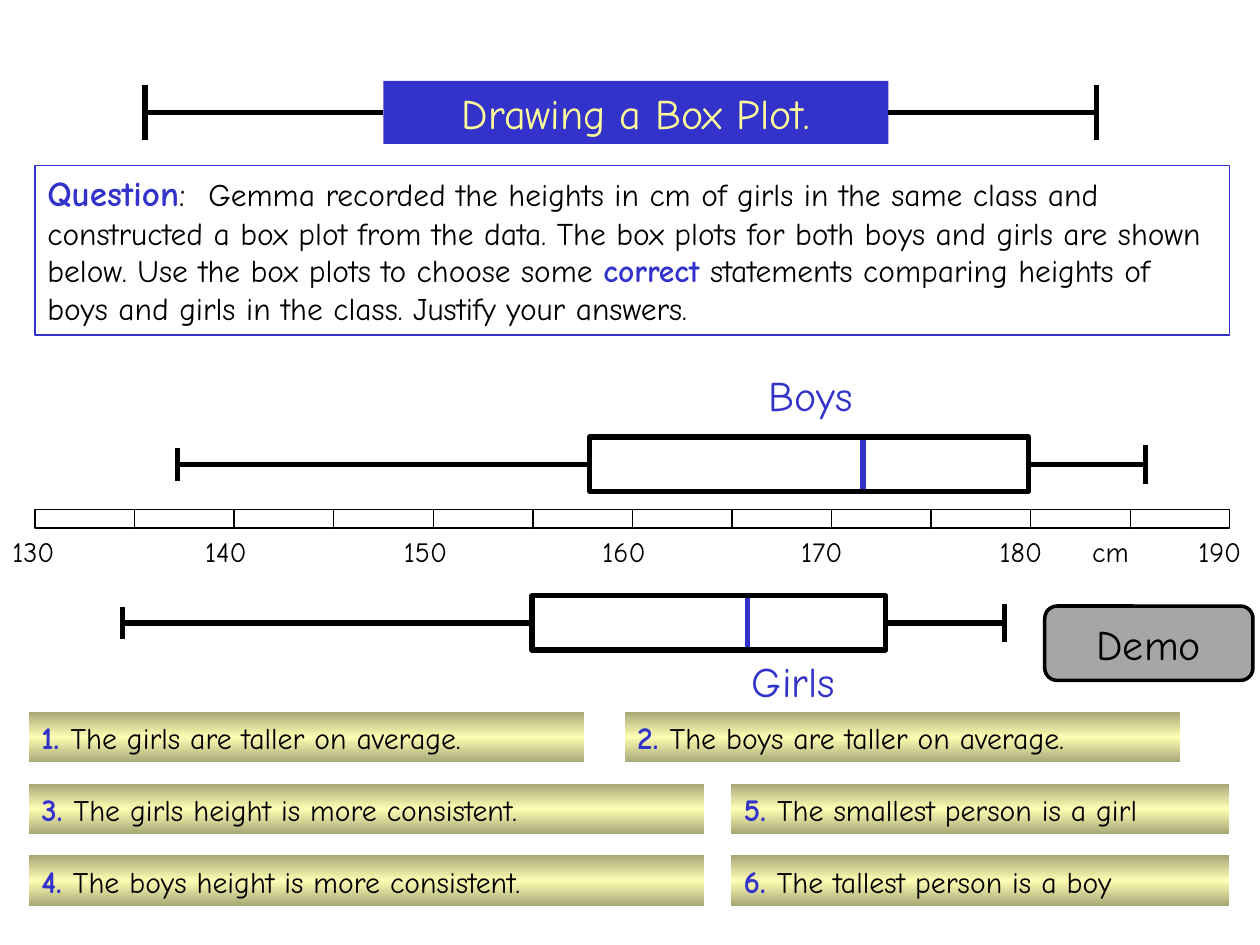
from copy import deepcopy

from lxml import etree
from pptx import Presentation
from pptx import util as u
from pptx.dml.color import RGBColor
from pptx.enum import shapes, text
from pptx.oxml import ns

COLOURS = {
    "blue": "3333CC",
    "black": "000000",
    "cream": "FFFF99",
    "grey": "A6A6A6",
    "olive": "A8A877",
    "pale": "FDFDB3",
}
LEFT_SIDE, RIGHT_SIDE = 1, 3
RECT = shapes.MSO_SHAPE.RECTANGLE
ROUNDED = shapes.MSO_SHAPE.ROUNDED_RECTANGLE


def colour(name):
    return RGBColor.from_string(COLOURS[name])


class Board:
    """Holds the text style and the current slide."""

    font_name = "Comic Neue"
    heavy = 3
    thin = 0.75

    def __init__(self, slide):
        self.slide = slide

    def add_words(self, box, spans, centred=False, middle=False, tab=None):
        """Each span is (words, size, colour, bold)."""
        frame = box.text_frame
        frame.word_wrap = True
        frame.vertical_anchor = (
            text.MSO_ANCHOR.MIDDLE if middle else text.MSO_ANCHOR.TOP)
        para = frame.paragraphs[0]
        para.alignment = text.PP_ALIGN.CENTER if centred else text.PP_ALIGN.LEFT
        if tab:
            stops = etree.SubElement(para._p.get_or_add_pPr(), ns.qn("a:tabLst"))
            etree.SubElement(stops, ns.qn("a:tab"), pos=str(u.Pt(tab)), algn="l")
        for words, size, ink, bold in spans:
            span = para.add_run()
            span.text = words
            style = {"name": self.font_name, "size": u.Pt(size), "bold": bold}
            for key, value in style.items():
                setattr(span.font, key, value)
            span.font.color.rgb = colour(ink)

    def label(self, left, top, width, height, words, size, ink):
        box = self.slide.shapes.add_textbox(
            *map(u.Pt, (left, top, width, height)))
        self.add_words(box, [(words, size, ink, False)])

    def box(self, left, top, width, height, fill=None, line=None, weight=thin,
            kind=RECT):
        box = self.slide.shapes.add_shape(
            kind, *map(u.Pt, (left, top, width, height)))
        box.shadow.inherit = False
        if fill:
            box.fill.solid()
            box.fill.fore_color.rgb = colour(fill)
        else:
            box.fill.background()
        if line:
            box.line.color.rgb = colour(line)
            box.line.width = u.Pt(weight)
        else:
            box.line.fill.background()
        return box

    def line(self, x1, y1, x2, y2, ink="black"):
        line = self.slide.shapes.add_connector(
            shapes.MSO_CONNECTOR.STRAIGHT, *map(u.Pt, (x1, y1, x2, y2)))
        line.line.color.rgb = colour(ink)
        line.line.width = u.Pt(self.heavy)
        etree.SubElement(line._element.spPr, ns.qn("a:effectLst"))
        return line

    def whisker(self, box, side, x, half_cap):
        """Line from the side of a box out to x, closed by a cap."""
        y = (box.top + box.height / 2) / u.Pt(1)
        line = self.line(x, y, x, y)
        line.end_connect(box, side)
        self.line(x, y - half_cap, x, y + half_cap)

    def box_plot(self, top, low, lower, median, upper, high):
        height = 31
        self.line(median, top, median, top + height, "blue")
        box = self.box(lower, top, upper - lower, height,
                       line="black", weight=self.heavy)
        self.whisker(box, LEFT_SIDE, low, 9.4)
        self.whisker(box, RIGHT_SIDE, high, 11)

    def statement(self, left, top, width, number, words):
        box = self.box(left, top, width, 28.8)
        box.fill.gradient()
        box.fill.gradient_angle = 270
        stops = box._element.spPr.find(".//" + ns.qn("a:gsLst"))
        stops.insert(1, deepcopy(stops[0]))
        for stop, ink, position in zip(
                box.fill.gradient_stops, ("olive", "pale", "olive"), (0, 0.5, 1)):
            stop.color.rgb = colour(ink)
            stop.position = position
        self.add_words(box, [(f"{number}. ", 18, "blue", True),
                             (words, 17, "black", False)])


def main():
    deck = Presentation()
    deck.slide_width, deck.slide_height = u.Pt(720), u.Pt(540)
    page = deck.slides.add_slide(deck.slide_layouts[6])
    board = Board(page)

    # Title shaped as a box plot
    title = board.box(219, 46.2, 288.6, 36, fill="blue")
    board.add_words(title, [("Drawing a Box Plot.", 24, "cream", False)], centred=True)
    board.whisker(title, LEFT_SIDE, 82.8, 15.8)
    board.whisker(title, RIGHT_SIDE, 626.4, 15.8)

    # Question
    question = board.box(20, 94.5, 682.8, 97, line="blue")
    board.add_words(question, [
        ("Question", 20, "blue", True),
        (":\t", 20, "black", False),
        ("Gemma recorded the heights in cm of girls in the same class and "
         "constructed a box plot from the data. The box plots for both boys and "
         "girls are shown below. Use the box plots to choose some ",
         18, "black", False),
        ("correct", 18, "blue", True),
        (" statements comparing heights of boys and girls in the class. "
         "Justify your answers.", 18, "black", False),
    ], tab=92)

    # Height scale
    for cell in range(12):
        board.box(20 + 56.9 * cell, 291, 56.9, 10.8, line="black")
    for index, height in enumerate(range(130, 191, 10)):
        left = max(0, 113.5 * index - 3.3)
        board.label(left, 301.7, 47.5, 26.6, str(height), 16, "black")
    board.label(617, 301.7, 57, 26.6, "cm", 16, "black")

    # Box plots
    board.box_plot(249.8, low=101.4, lower=337, median=493.2, upper=587.6, high=654.6)
    board.box_plot(340.5, low=69.8, lower=304, median=427, upper=506.2, high=573.8)
    board.label(432, 207.4, 85, 36, "Boys", 24, "blue")
    board.label(422.6, 371, 85, 36, "Girls", 24, "blue")

    # Statements
    first_row, row_step = 406.8, 41
    statements = [
        (16.5, 0, 317.5, 1, "The girls are taller on average."),
        (357, 0, 317.5, 2, "The boys are taller on average."),
        (16.5, 1, 386, 3, "The girls height is more consistent."),
        (16.5, 2, 386, 4, "The boys height is more consistent."),
        (417.8, 1, 284.5, 5, "The smallest person is a girl"),
        (417.8, 2, 284.5, 6, "The tallest person is a boy"),
    ]
    for left, row, width, number, words in statements:
        board.statement(left, first_row + row_step * row, width, number, words)

    # Demo button
    demo = board.box(597, 346.3, 119, 42.5, "grey", "black", 2, ROUNDED)
    board.add_words(demo, [("Demo", 24, "black", False)], centred=True, middle=True)

    deck.save("out.pptx")


if __name__ == "__main__":
    main()
